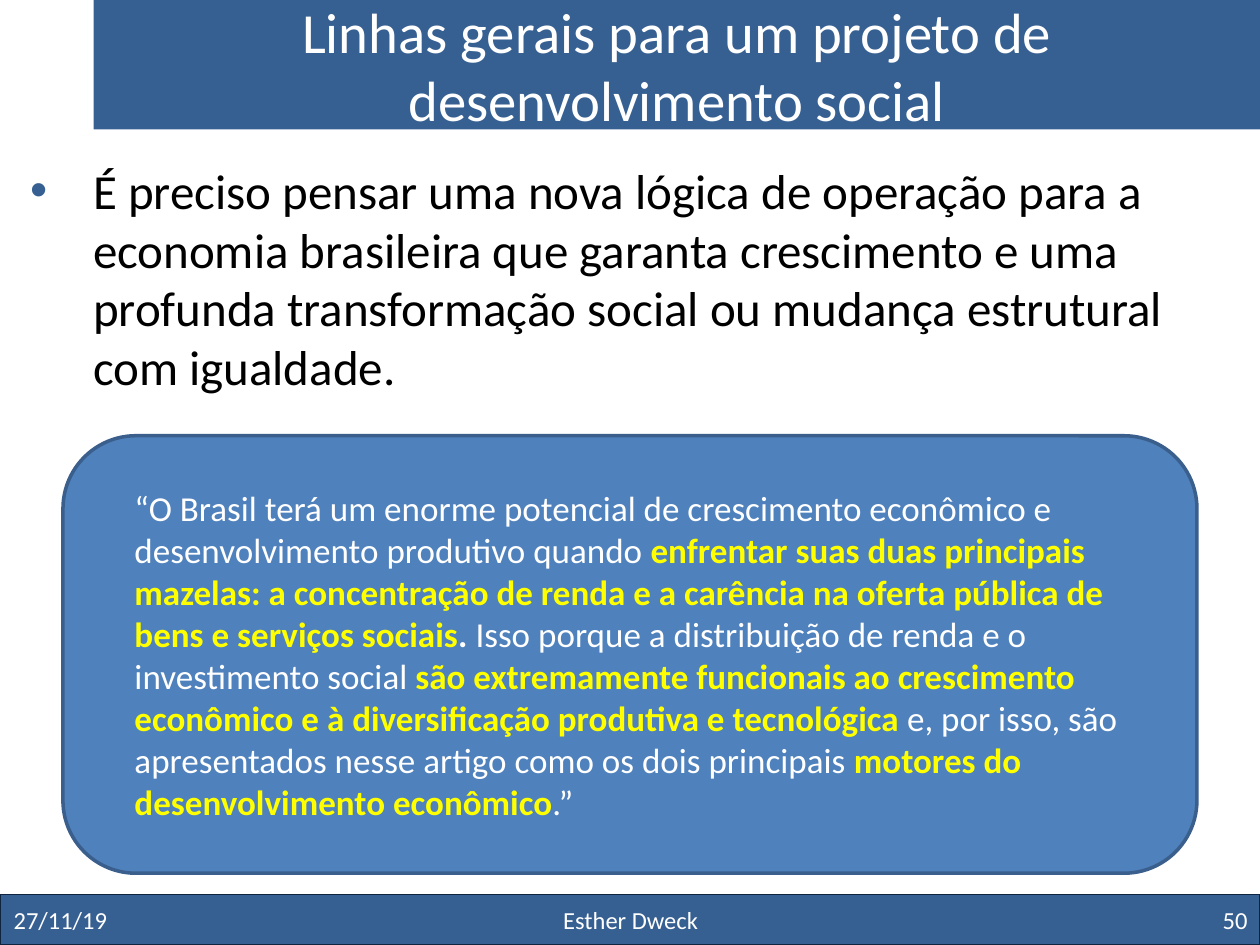
"""Build the slide on general lines for a social development project."""
from dataclasses import dataclass

from lxml.etree import SubElement
from pptx import Presentation
from pptx.dml.color import RGBColor
from pptx.enum.shapes import MSO_SHAPE
from pptx.enum.text import MSO_ANCHOR, MSO_AUTO_SIZE, PP_ALIGN
from pptx.oxml.ns import qn
from pptx.util import Pt

FONT = "Calibri"
BLUE, WHITE, BLACK, YELLOW = "376092", "FFFFFF", "000000", "FFFF00"
FOOTER_TOP, FOOTER_HEIGHT = 511.2, 28.8


@dataclass(frozen=True)
class Box:
    left: float
    top: float
    width: float
    height: float

    def lengths(self) -> tuple:
        return Pt(self.left), Pt(self.top), Pt(self.width), Pt(self.height)


@dataclass(frozen=True)
class Span:
    text: str
    color: str = WHITE
    bold: bool = False


@dataclass(frozen=True)
class FooterItem:
    text: str
    left: float
    width: float
    alignment: PP_ALIGN


FOOTER = (
    FooterItem("Esther Dweck", 246.24, 228.24, PP_ALIGN.CENTER),
    FooterItem("27/11/19", 0.72, 167.76, PP_ALIGN.LEFT),
    FooterItem("50", 552.24, 167.76, PP_ALIGN.RIGHT),
)
QUOTE = (
    Span("“O Brasil terá um enorme potencial de crescimento econômico e "
         "desenvolvimento produtivo quando "),
    Span("enfrentar suas duas principais mazelas: a concentração de renda e a "
         "carência na oferta pública de bens e serviços sociais", YELLOW, True),
    Span(". ", WHITE, True),
    Span("Isso porque a distribuição de renda e o investimento social "),
    Span("são extremamente funcionais ao crescimento econômico e à "
         "diversificação produtiva e tecnológica ", YELLOW, True),
    Span("e, por isso, são apresentados nesse artigo como os dois principais "),
    Span("motores do desenvolvimento econômico", YELLOW, True),
    Span(".”"),
)


def rgb(color: str) -> RGBColor:
    return RGBColor.from_string(color)


def place(shape, box: Box) -> None:
    shape.left, shape.top, shape.width, shape.height = box.lengths()


def fill(shape, color: str) -> None:
    shape.fill.solid()
    shape.fill.fore_color.rgb = rgb(color)


def write(shape, spans: tuple, size: float, alignment: PP_ALIGN, anchor: MSO_ANCHOR):
    frame = shape.text_frame
    frame.word_wrap = True
    frame.auto_size = MSO_AUTO_SIZE.NONE
    frame.vertical_anchor = anchor
    paragraph = frame.paragraphs[0]
    paragraph.alignment = alignment
    paragraph.space_before = Pt(0)
    for span in spans:
        run = paragraph.add_run()
        run.text = span.text
        run.font.name = FONT
        run.font.size = Pt(size)
        run.font.bold = span.bold
        run.font.color.rgb = rgb(span.color)
    return paragraph


def indent(paragraph, margin: float, first_line: float = 0):
    properties = paragraph._p.get_or_add_pPr()
    properties.set("marL", str(Pt(margin)))
    properties.set("indent", str(Pt(first_line)))
    return properties


def add_bullet(properties, character: str, color: str) -> None:
    bullet_color = SubElement(properties, qn("a:buClr"))
    SubElement(bullet_color, qn("a:srgbClr")).set("val", color)
    SubElement(properties, qn("a:buFont")).set("typeface", "Arial")
    SubElement(properties, qn("a:buChar")).set("char", character)


def add_panel(slide, kind: MSO_SHAPE, box: Box, color: str, line: str, width: float):
    shape = slide.shapes.add_shape(kind, *box.lengths())
    shape.shadow.inherit = False
    fill(shape, color)
    shape.line.color.rgb = rgb(line)
    shape.line.width = Pt(width)
    return shape


def add_footer_item(slide, item: FooterItem) -> None:
    box = Box(item.left, FOOTER_TOP, item.width, FOOTER_HEIGHT)
    shape = slide.shapes.add_textbox(*box.lengths())
    write(shape, (Span(item.text),), 14, item.alignment, MSO_ANCHOR.MIDDLE)


def main() -> None:
    presentation = Presentation()
    presentation.slide_width, presentation.slide_height = Pt(720), Pt(540)
    slide = presentation.slides.add_slide(presentation.slide_layouts[1])

    title, body = slide.placeholders
    place(title, Box(53.5, 0, 666.5, 74))
    fill(title, BLUE)
    heading = Span("Linhas gerais para um projeto de desenvolvimento social")
    write(title, (heading,), 32.4, PP_ALIGN.CENTER, MSO_ANCHOR.MIDDLE)

    place(body, Box(10, 88, 695, 412))
    statement = Span(
        "É preciso pensar uma nova lógica de operação para a economia brasileira que "
        "garanta crescimento e uma profunda transformação social ou mudança "
        "estrutural com igualdade.", BLACK)
    paragraph = write(body, (statement,), 28, PP_ALIGN.LEFT, MSO_ANCHOR.TOP)
    add_bullet(indent(paragraph, 36, -36), "•", BLUE)

    quote = add_panel(slide, MSO_SHAPE.ROUNDED_RECTANGLE, Box(36, 249, 648, 250),
                      "4F81BD", "3A5F8C", 2)
    paragraph = write(quote, QUOTE, 20, PP_ALIGN.LEFT, MSO_ANCHOR.MIDDLE)
    paragraph.level = 1
    indent(paragraph, 21.6)

    add_panel(slide, MSO_SHAPE.RECTANGLE, Box(0, FOOTER_TOP, 720, FOOTER_HEIGHT),
              BLUE, "0F243E", 0.75)
    for item in FOOTER:
        add_footer_item(slide, item)

    presentation.save("out.pptx")


if __name__ == "__main__":
    main()
